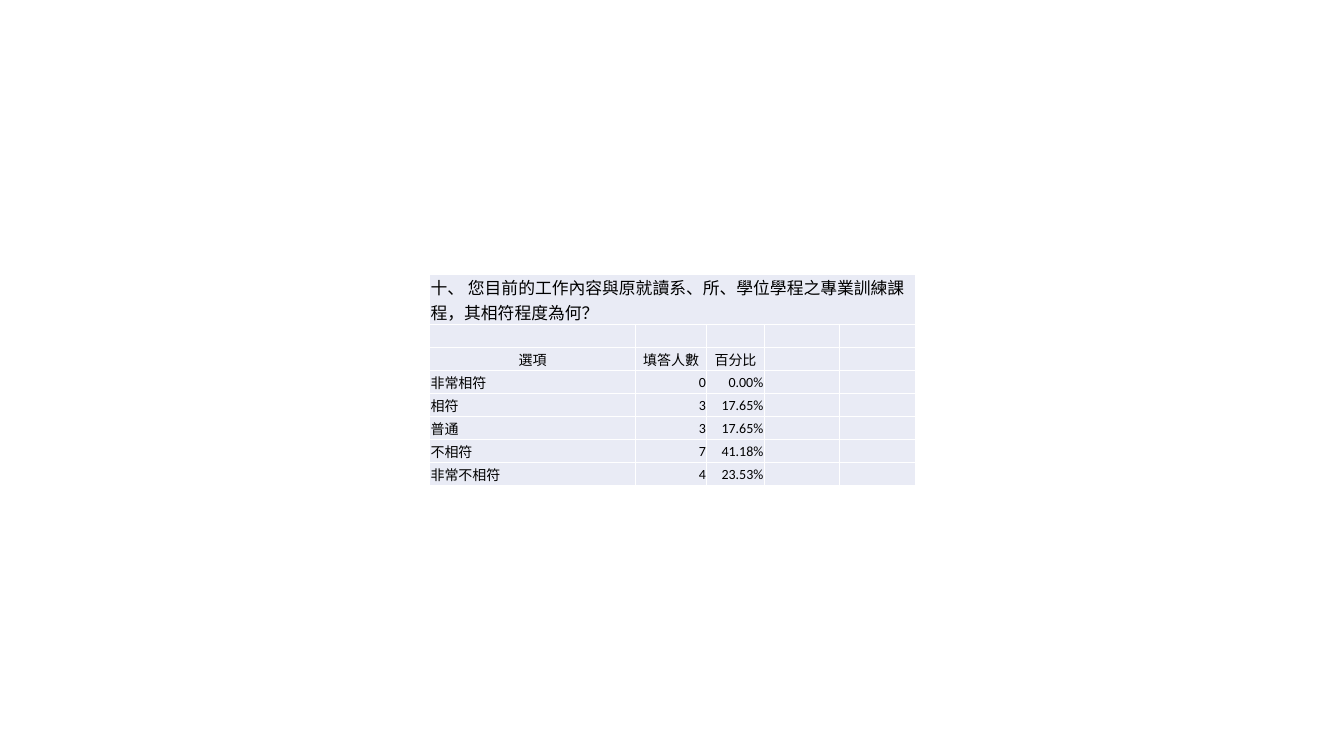
from dataclasses import dataclass

from lxml.etree import SubElement
from pptx import Presentation
from pptx.dml.color import RGBColor
from pptx.enum.text import MSO_ANCHOR, PP_ALIGN
from pptx.oxml.ns import qn
from pptx.table import Table, _Cell
from pptx.util import Pt


@dataclass(frozen=True)
class Theme:
    font: str = "Calibri"
    text: str = "000000"
    cell_fill: str = "E9EBF5"
    border: str = "FFFFFF"
    border_width: float = 1
    question_size: float = 12
    body_size: float = 10
    cell_margin: float = 0.7


@dataclass(frozen=True)
class Answer:
    option: str
    count: int
    percentage: str


THEME = Theme()
QUESTION = "十、 您目前的工作內容與原就讀系、所、學位學程之專業訓練課程，其相符程度為何？"
HEADINGS = ("選項", "填答人數", "百分比")
ANSWERS = (
    Answer("非常相符", 0, "0.00%"),
    Answer("相符", 3, "17.65%"),
    Answer("普通", 3, "17.65%"),
    Answer("不相符", 7, "41.18%"),
    Answer("非常不相符", 4, "23.53%"),
)
TABLE_LEFT, TABLE_TOP = 306.9, 196
COLUMN_WIDTHS = (147, 51, 41, 54, 54)
QUESTION_HEIGHT, ROW_HEIGHT = 33, 16.5
HEADING_ROW = 2
ROW_HEIGHTS = (QUESTION_HEIGHT,) + (ROW_HEIGHT,) * (HEADING_ROW + len(ANSWERS))


def style_cell(cell: _Cell) -> None:
    """Give a cell its margins, borders, fill and empty-text size."""
    cell.margin_left = cell.margin_right = cell.margin_top = Pt(THEME.cell_margin)
    cell.margin_bottom = 0
    cell.vertical_anchor = MSO_ANCHOR.MIDDLE
    properties = cell._tc.get_or_add_tcPr()
    for side in ("a:lnL", "a:lnR", "a:lnT", "a:lnB"):
        line = SubElement(properties, qn(side), w=str(Pt(THEME.border_width)))
        line_fill = SubElement(line, qn("a:solidFill"))
        SubElement(line_fill, qn("a:srgbClr"), val=THEME.border)
    cell.fill.solid()
    cell.fill.fore_color.rgb = RGBColor.from_string(THEME.cell_fill)
    # Keep empty cells from stretching their rows
    paragraph = cell.text_frame.paragraphs[0]
    SubElement(paragraph._p, qn("a:endParaRPr"), sz=str(int(THEME.body_size * 100)))


def write_cell(cell: _Cell, text: str, alignment: PP_ALIGN, size: float) -> None:
    """Write and format one line of cell text."""
    paragraph = cell.text_frame.paragraphs[0]
    paragraph.text = text
    paragraph.alignment = alignment
    font = paragraph.runs[0].font
    font.name = THEME.font
    font.size = Pt(size)
    font.color.rgb = RGBColor.from_string(THEME.text)


def fill_table(table: Table) -> None:
    """Write the question, the headings and the answers."""
    question_cell = table.cell(0, 0)
    question_cell.merge(table.cell(0, len(COLUMN_WIDTHS) - 1))
    write_cell(question_cell, QUESTION, PP_ALIGN.LEFT, THEME.question_size)

    for column, heading in enumerate(HEADINGS):
        write_cell(table.cell(HEADING_ROW, column), heading, PP_ALIGN.CENTER, THEME.body_size)

    for row, answer in enumerate(ANSWERS, start=HEADING_ROW + 1):
        values = (answer.option, str(answer.count), answer.percentage)
        for column, value in enumerate(values):
            alignment = PP_ALIGN.RIGHT if column else PP_ALIGN.LEFT
            write_cell(table.cell(row, column), value, alignment, THEME.body_size)


def main() -> None:
    presentation = Presentation()
    presentation.slide_width, presentation.slide_height = Pt(960), Pt(540)
    slide = presentation.slides.add_slide(presentation.slide_layouts[6])

    # Survey table
    table = slide.shapes.add_table(
        len(ROW_HEIGHTS), len(COLUMN_WIDTHS), Pt(TABLE_LEFT), Pt(TABLE_TOP),
        Pt(sum(COLUMN_WIDTHS)), Pt(sum(ROW_HEIGHTS)),
    ).table
    table.first_row = table.horz_banding = False
    for column, width in zip(table.columns, COLUMN_WIDTHS):
        column.width = Pt(width)
    for row, height in zip(table.rows, ROW_HEIGHTS):
        row.height = Pt(height)
    for cell in table.iter_cells():
        style_cell(cell)
    fill_table(table)

    presentation.save("out.pptx")


if __name__ == "__main__":
    main()
